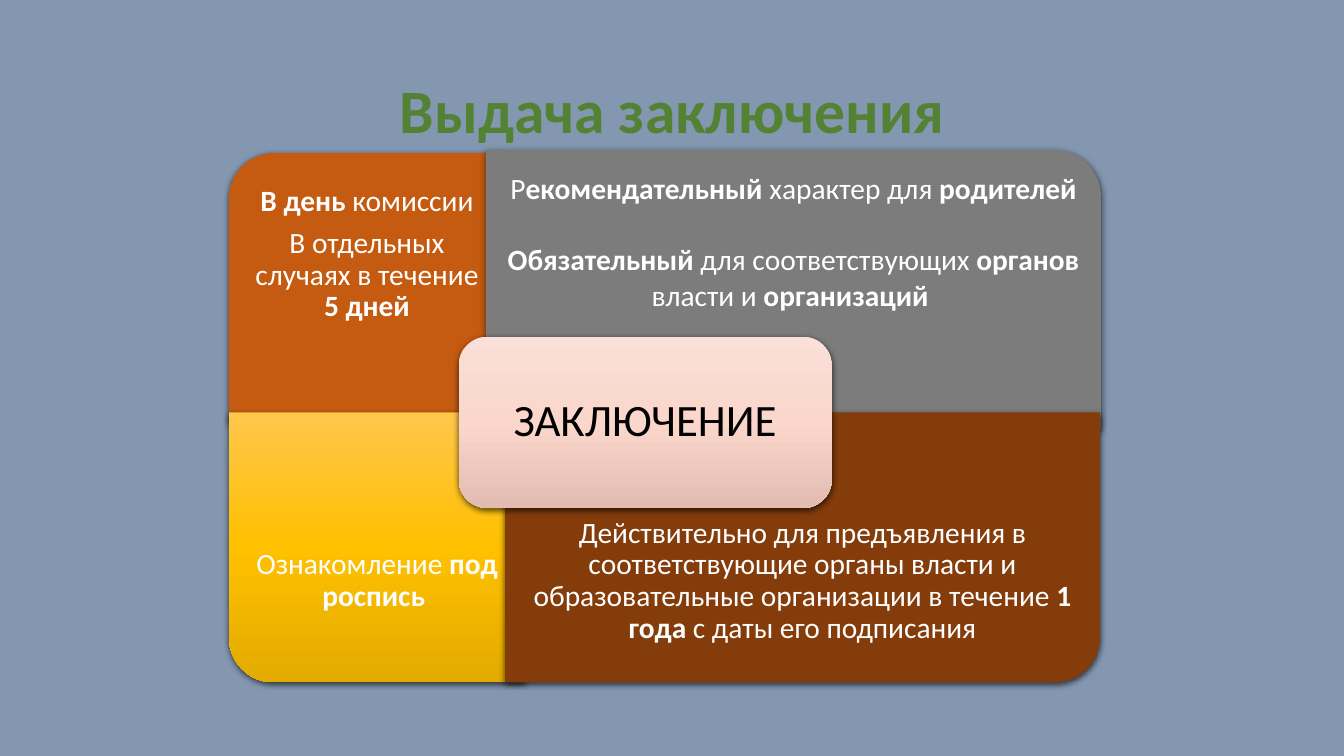
from lxml import etree
from pptx import Presentation
from pptx.dml.color import RGBColor
from pptx.enum.shapes import MSO_SHAPE
from pptx.enum.text import MSO_ANCHOR, PP_ALIGN
from pptx.oxml import parse_xml
from pptx.oxml.ns import nsdecls, qn
from pptx.util import Inches, Pt

FONT = "Calibri"
COLORS = {
    "background": "8497B0",
    "title": "548235",
    "orange": "C55A11",
    "gray": "7C7C7C",
    "brown": "843C0B",
    "white": "FFFFFF",
    "black": "000000",
}
GRADIENTS = {
    "gold": ("FFC64B", "FFC000", "E3AB00"),
    "pink": ("FAE0D8", "FAD6CB", "E2BCB1"),
}
BODY_SIZE = 21
PARAGRAPH_GAP = 7.35

# Each paragraph is a list of (text, bold) runs.
TIMING = [
    [("В день ", True), ("комиссии", False)],
    [("В отдельных случаях в течение ", False), ("5 дней", True)],
]
STATUS = [
    [("Р", False), ("екомендательный", True), (" характер для ", False),
     ("родителей", True)],
    [("Обязательный ", True), ("для соответствующих ", False),
     ("органов", True), (" власти и ", False), ("организаций ", True)],
]
SIGNATURE = [[("Ознакомление ", False), ("под роспись ", True)]]
VALIDITY = [
    [("Действительно для предъявления в соответствующие органы власти и "
      "образовательные организации в течение ", False),
     ("1 года ", True), ("с даты его подписания", False)],
]


def rgb(name):
    return RGBColor.from_string(COLORS[name])


def fill_gradient(shape, stops):
    """Fill from top to bottom, whatever the rotation of the shape."""
    gradient = parse_xml(f'<a:gradFill {nsdecls("a")} rotWithShape="0"><a:gsLst/>'
                         '<a:lin ang="5400000" scaled="0"/></a:gradFill>')
    for index, color in enumerate(stops):
        stop = etree.SubElement(gradient[0], qn("a:gs"), pos=str(index * 50000))
        etree.SubElement(stop, qn("a:srgbClr"), val=color)
    shape.fill.background()
    properties = shape.element.spPr
    properties.replace(properties.find(qn("a:noFill")), gradient)


def add_shadow(shape):
    shape.shadow.inherit = False
    effects = shape.element.spPr.find(qn("a:effectLst"))
    effects.append(parse_xml(
        f'<a:outerShdw {nsdecls("a")} blurRad="{Pt(4.5)}" dist="{Pt(1.5)}" '
        'dir="5400000" algn="ctr" rotWithShape="0"><a:srgbClr val="000000">'
        '<a:alpha val="63000"/></a:srgbClr></a:outerShdw>'))


def add_panel(slide, kind, box, fill, rotation=0):
    """Add a shadowed panel that covers the box after its rotation."""
    left, top, width, height = box
    if rotation % 180:
        left, top = left + (width - height) / 2, top + (height - width) / 2
        width, height = height, width
    shape = slide.shapes.add_shape(
        kind, Inches(left), Inches(top), Inches(width), Inches(height))
    shape.rotation = rotation
    if fill in GRADIENTS:
        fill_gradient(shape, GRADIENTS[fill])
    else:
        shape.fill.solid()
        shape.fill.fore_color.rgb = rgb(fill)
    shape.line.fill.background()
    add_shadow(shape)


def add_text(slide, box, paragraphs, size=BODY_SIZE, color="white", inset=0.16,
             anchor=MSO_ANCHOR.MIDDLE, line_spacing=0.9, gap=PARAGRAPH_GAP):
    frame = slide.shapes.add_textbox(*map(Inches, box)).text_frame
    frame.word_wrap = True
    frame.vertical_anchor = anchor
    frame.margin_left = frame.margin_right = Inches(inset)
    frame.margin_top = frame.margin_bottom = Inches(inset)
    for index, runs in enumerate(paragraphs):
        paragraph = frame.add_paragraph() if index else frame.paragraphs[0]
        paragraph.alignment = PP_ALIGN.CENTER
        paragraph.line_spacing = line_spacing
        paragraph.space_after = Pt(gap if index < len(paragraphs) - 1 else 0)
        for text, bold in runs:
            run = paragraph.add_run()
            run.text = text
            run.font.name = FONT
            run.font.size = Pt(size)
            run.font.bold = bold
            run.font.color.rgb = rgb(color)


def add_quadrants(slide, left, top):
    """Add four panels, each with its round corner turned outwards."""
    corner = MSO_SHAPE.ROUND_1_RECTANGLE
    lower, text_lower, text_height = top + 2.6, top + 3.27, 2.01

    add_panel(slide, corner, (left, top + 0.03, 2.74, 2.68), "orange", 270)
    add_text(slide, (left, top + 0.03, 2.74, text_height), TIMING)

    add_panel(slide, corner, (left + 2.55, top, 6.1, 2.77), "gray")
    add_text(slide, (left + 2.55, top + 0.04, 6.1, text_height), STATUS,
             anchor=MSO_ANCHOR.TOP, line_spacing=1.0, gap=25.6)

    add_panel(slide, corner, (left, lower, 2.94, 2.68), "gold", 180)
    add_text(slide, (left, text_lower, 2.94, text_height), SIGNATURE)

    add_panel(slide, corner, (left + 2.74, lower, 5.9, 2.68), "brown", 90)
    add_text(slide, (left + 2.74, text_lower, 5.9, text_height), VALIDITY)


def add_center(slide, box):
    add_panel(slide, MSO_SHAPE.ROUNDED_RECTANGLE, box, "pink")
    add_text(slide, box, [[("ЗАКЛЮЧЕНИЕ", False)]], size=32, color="black")


def main():
    presentation = Presentation()
    presentation.slide_width = Inches(13.33)
    presentation.slide_height = Inches(7.5)
    slide = presentation.slides.add_slide(presentation.slide_layouts[6])
    slide.background.fill.solid()
    slide.background.fill.fore_color.rgb = rgb("background")

    add_text(slide, (0.92, 0.4, 11.5, 1.45), [[("Выдача заключения", True)]],
             size=44, color="title", inset=0.1)
    add_quadrants(slide, 2.27, 1.49)
    add_center(slide, (4.55, 3.34, 3.7, 1.7))
    presentation.save("out.pptx")


if __name__ == "__main__":
    main()
